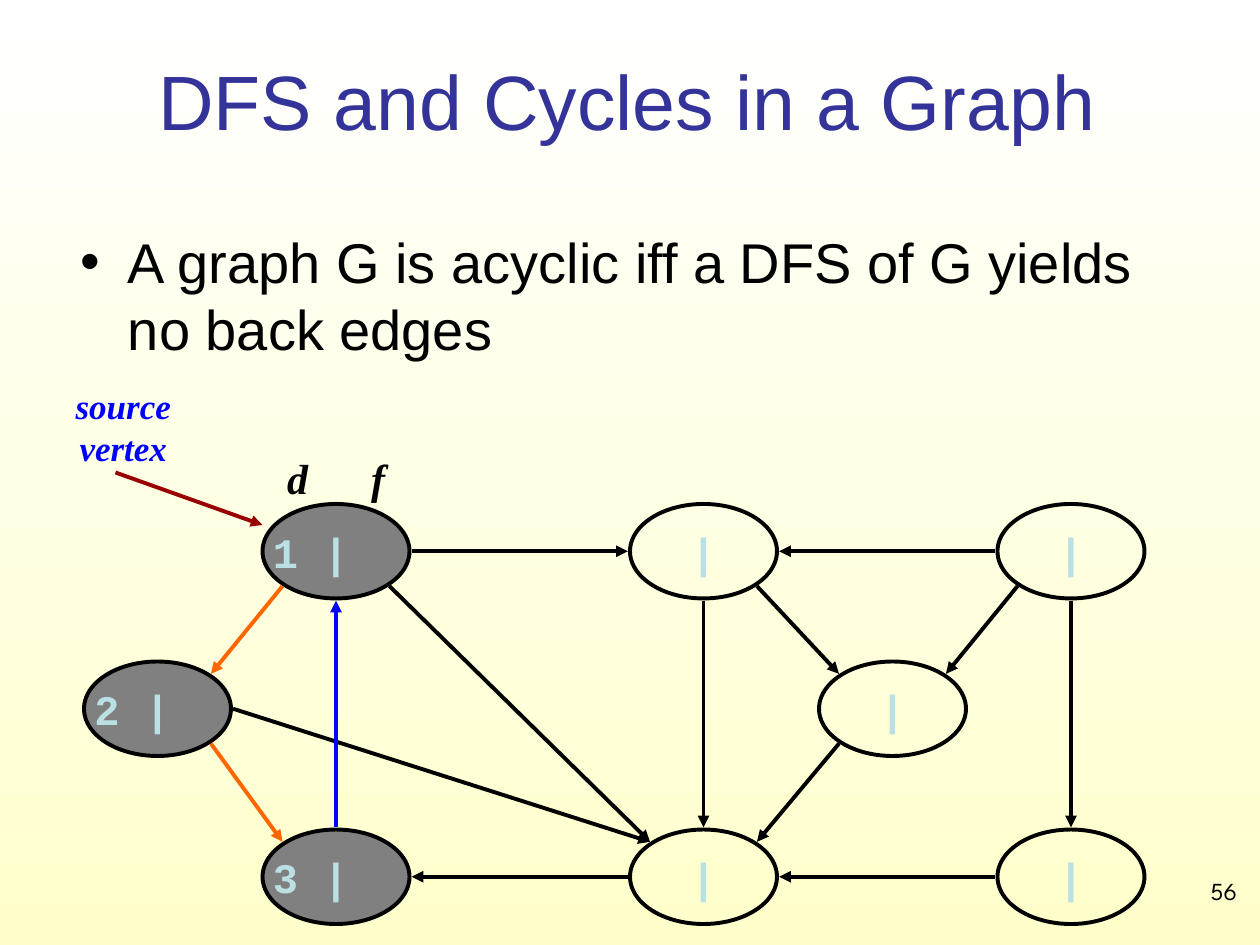
from math import sqrt

from lxml import etree
from pptx import Presentation
from pptx.dml.color import RGBColor
from pptx.enum.shapes import MSO_CONNECTOR, MSO_SHAPE
from pptx.enum.text import MSO_ANCHOR, PP_ALIGN
from pptx.oxml.ns import qn
from pptx.util import Pt

STRAIGHT = MSO_CONNECTOR.STRAIGHT
OVAL = MSO_SHAPE.OVAL
TOP, MIDDLE = MSO_ANCHOR.TOP, MSO_ANCHOR.MIDDLE
LEFT, CENTER, RIGHT = PP_ALIGN.LEFT, PP_ALIGN.CENTER, PP_ALIGN.RIGHT

# Content
COLORS = {
    "white": "FFFFFF", "cream": "FFFFCC", "title": "333399", "black": "000000",
    "visited": "808080", "label": "BBE0E3", "tree": "FF6600", "back": "0000FF",
    "pointer": "990000",
}
TITLE = "DFS and Cycles in a Graph"
BULLET = "A graph G is acyclic iff a DFS of G yields no back edges"
SOURCE_LABEL = ["source", "vertex"]
TIMES_LABEL = "d\tf"
PAGE_NUMBER = "56"

# Vertex: centre x, centre y, discovery time
VERTICES = {
    "source": (192, 315, "1"),
    "top": (402, 315, ""),
    "top right": (612, 315, ""),
    "bottom right": (612, 501, ""),
    "bottom": (402, 501, ""),
    "bottom left": (192, 501, "3"),
    "left": (90, 405, "2"),
    "inner": (510, 405, ""),
}
# Edge: start vertex, side, end vertex, side, colour
EDGES = [
    ("source", "SW", "left", "NE", "tree"),
    ("left", "SE", "bottom left", "NW", "tree"),
    ("left", "E", "bottom", "NW", "black"),
    ("bottom", "W", "bottom left", "E", "black"),
    ("bottom left", "N", "source", "S", "back"),
    ("source", "SE", "bottom", "NW", "black"),
    ("top", "S", "bottom", "N", "black"),
    ("source", "E", "top", "W", "black"),
    ("top right", "W", "top", "E", "black"),
    ("top", "SE", "inner", "NW", "black"),
    ("top right", "SW", "inner", "NE", "black"),
    ("top right", "S", "bottom right", "N", "black"),
    ("bottom right", "W", "bottom", "E", "black"),
    ("inner", "SW", "bottom", "NE", "black"),
]
VERTEX_WIDTH, VERTEX_HEIGHT = 84, 54
EDGE_GAP = 1.2
LINE_WIDTH = 2.25
LETTER_WIDTH = 14.4  # one 24 pt Courier New letter


def color(name):
    return RGBColor.from_string(COLORS[name])


def write(shape, lines, size, font, color_name, align=LEFT, anchor=TOP,
          wrap=True, bold=False, italic=False):
    frame = shape.text_frame
    frame.word_wrap = wrap
    frame.vertical_anchor = anchor
    para = frame.paragraphs[0]
    para.alignment = align
    for index, line in enumerate(lines):
        if index:
            para.add_line_break()
        span = para.add_run()
        span.text = line
        span.font.size = Pt(size)
        span.font.name = font
        span.font.bold = bold
        span.font.italic = italic
        span.font.color.rgb = color(color_name)
    return frame


def add_box(page, left, top, width, height):
    return page.shapes.add_textbox(Pt(left), Pt(top), Pt(width), Pt(height))


def add_arrow(page, start, end, color_name):
    arrow = page.shapes.add_connector(
        STRAIGHT, *(Pt(round(value, 2)) for value in (*start, *end)))
    arrow.line.color.rgb = color(color_name)
    arrow.line.width = Pt(LINE_WIDTH)
    etree.SubElement(arrow.line._get_or_add_ln(), qn("a:tailEnd"), type="triangle")
    etree.SubElement(arrow._element.spPr, qn("a:effectLst"))


def add_vertex(page, x, y, time):
    oval = page.shapes.add_shape(
        OVAL, Pt(x - VERTEX_WIDTH / 2), Pt(y - VERTEX_HEIGHT / 2),
        Pt(VERTEX_WIDTH), Pt(VERTEX_HEIGHT))
    oval.shadow.inherit = False
    oval.line.color.rgb = color("black")
    oval.line.width = Pt(LINE_WIDTH)
    if time:
        oval.fill.solid()
        oval.fill.fore_color.rgb = color("visited")
    else:
        oval.fill.background()
    label = f"{time} |" if time else "|"
    frame = write(oval, [label], 24, "Courier New", "label", CENTER, MIDDLE,
                  wrap=False, bold=True)
    # The right margin keeps the bar in the middle of the oval
    frame.margin_left = Pt(0)
    frame.margin_right = Pt((len(label) - 1) * LETTER_WIDTH)


def edge_point(vertex, side):
    x, y, _ = VERTICES[vertex]
    across = ("E" in side) - ("W" in side)
    down = ("S" in side) - ("N" in side)
    scale = 1 / sqrt(len(side))
    return (x + across * scale * (VERTEX_WIDTH / 2 + EDGE_GAP),
            y + down * scale * (VERTEX_HEIGHT / 2 + EDGE_GAP))


def main():
    deck = Presentation()
    deck.slide_width, deck.slide_height = Pt(720), Pt(540)
    page = deck.slides.add_slide(deck.slide_layouts[6])

    # Background
    fill = page.background.fill
    fill.gradient()
    fill.gradient_angle = 270
    for stop, name in zip(fill.gradient_stops, ("white", "cream")):
        stop.color.rgb = color(name)

    # Title
    write(add_box(page, 34.5, 2, 648, 110), [TITLE], 44, "Arial", "title",
          CENTER, MIDDLE)

    # Bullet
    body = add_box(page, 39, 123, 636, 354)
    properties = body.text_frame.paragraphs[0]._p.get_or_add_pPr()
    properties.set("marL", str(Pt(27)))
    properties.set("indent", str(Pt(-27)))
    etree.SubElement(properties, qn("a:buFont"), typeface="Arial")
    etree.SubElement(properties, qn("a:buChar"), char="•")
    write(body, [BULLET], 32, "Arial", "black").margin_top = Pt(7)

    # Graph
    for x, y, time in VERTICES.values():
        add_vertex(page, x, y, time)
    for start, start_side, end, end_side, name in EDGES:
        add_arrow(page, edge_point(start, start_side),
                  edge_point(end, end_side), name)

    # Discovery and finish headings
    times = add_box(page, 150, 246, VERTEX_WIDTH, VERTEX_HEIGHT)
    properties = times.text_frame.paragraphs[0]._p.get_or_add_pPr()
    tabs = etree.SubElement(properties, qn("a:tabLst"))
    etree.SubElement(tabs, qn("a:tab"), pos=str(Pt(48)), algn="l")
    frame = write(times, [TIMES_LABEL], 24, "Times New Roman", "black",
                  anchor=MIDDLE, bold=True, italic=True)
    frame.margin_left, frame.margin_right = Pt(14), Pt(0)

    # Source pointer
    add_arrow(page, (66, 270), (150, 300), "pointer")
    write(add_box(page, 36, 216, 69, 55.5), SOURCE_LABEL, 20,
          "Times New Roman", "back", CENTER, wrap=False, bold=True, italic=True)

    # Page number
    write(add_box(page, 666, 497, 48, 37.5), [PAGE_NUMBER], 14,
          "League Spartan", "black", RIGHT)

    deck.save("out.pptx")


if __name__ == "__main__":
    main()
